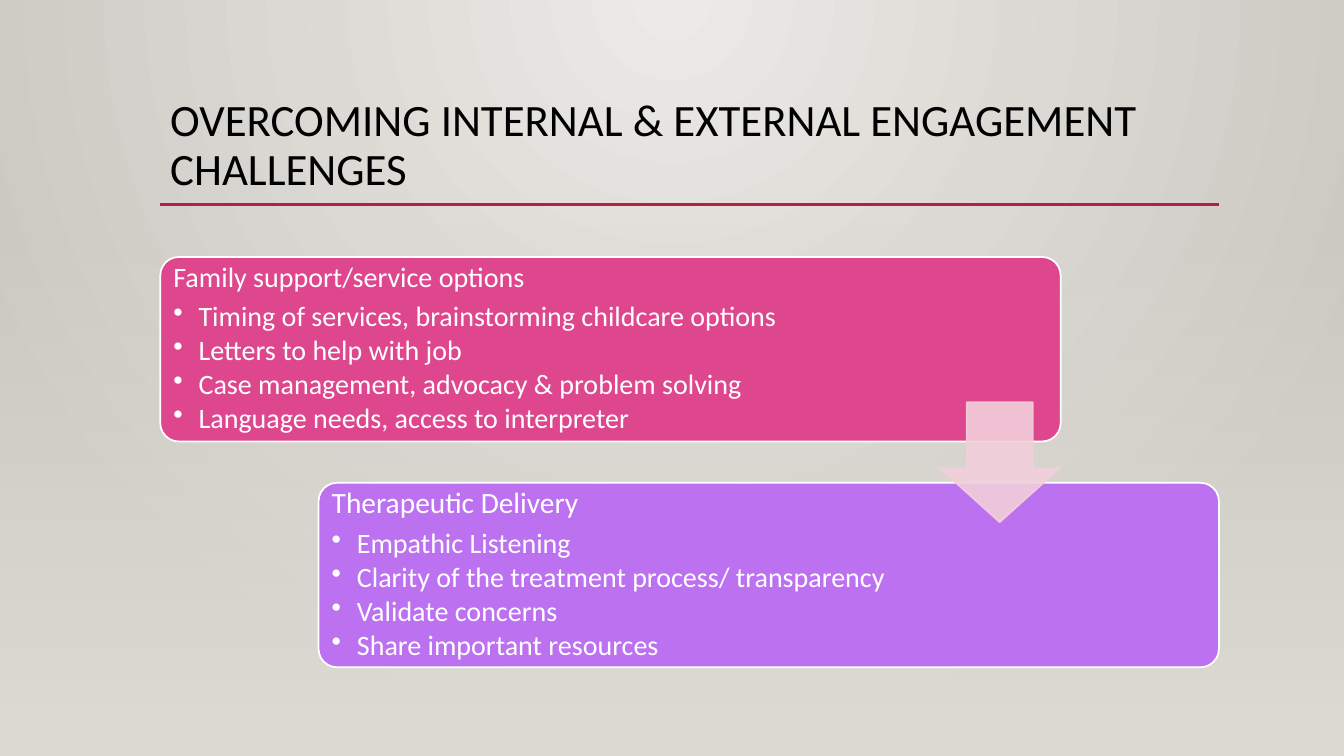
from lxml import etree
from pptx import Presentation
from pptx.dml.color import RGBColor
from pptx.enum.shapes import MSO_CONNECTOR, MSO_SHAPE
from pptx.enum.text import MSO_ANCHOR
from pptx.oxml import parse_xml
from pptx.oxml.ns import nsdecls, qn
from pptx.util import Inches, Pt

LINE = MSO_CONNECTOR.STRAIGHT
RECT = MSO_SHAPE.RECTANGLE
ROUND = MSO_SHAPE.ROUNDED_RECTANGLE
ARROW = MSO_SHAPE.DOWN_ARROW
MIDDLE = MSO_ANCHOR.MIDDLE

FONT = "Calibri"
BLACK = RGBColor(0x00, 0x00, 0x00)
WHITE = RGBColor(0xFF, 0xFF, 0xFF)
LIGHT = RGBColor(0xEC, 0xEA, 0xE7)
GREY = RGBColor(0xCA, 0xC7, 0xC1)
SAND = RGBColor(0xDF, 0xDB, 0xD5)
RED = RGBColor(0xB7, 0x1E, 0x42)
PINK = RGBColor(0xDE, 0x47, 0x8E)
VIOLET = RGBColor(0xBC, 0x72, 0xF0)
BLUSH = RGBColor(0xF2, 0xCF, 0xDB)

GLOW = (
    f'<a:path {nsdecls("a")} path="circle">'
    '<a:fillToRect l="43000" t="0" r="43000" b="100000"/></a:path>'
)
STEPS = [
    (1.59, 2.55, 7.03, PINK, 20, "Family support/service options", [
        "Timing of services, brainstorming childcare options",
        "Letters to help with job",
        "Case management, advocacy & problem solving",
        "Language needs, access to interpreter",
    ]),
    (3.16, 4.79, 6.05, VIOLET, 21, "Therapeutic Delivery", [
        "Empathic Listening",
        "Clarity of the treatment process/ transparency",
        "Validate concerns",
        "Share important resources",
    ]),
]


def set_alpha(color, share):
    """Set the opacity, in percent, of a colour element."""
    etree.SubElement(color, qn("a:alpha"), val=str(share * 1000))


def set_stops(fill, first, last):
    """Turn a fill into a gradient between two colours."""
    fill.gradient()
    for stop, color in zip(fill.gradient_stops, (first, last)):
        stop.color.rgb = color


def paint_back(slide):
    """Give the slide a round glow from the top centre."""
    fill = slide.background.fill
    set_stops(fill, LIGHT, GREY)
    lin = next(slide.element.iter(qn("a:lin")))
    lin.getparent().replace(lin, parse_xml(GLOW))


def add_fade(slide):
    """Add the band that fades in toward the foot of the slide."""
    band = slide.shapes.add_shape(
        RECT, Inches(0), Inches(2.21), Inches(13.33), Inches(5.29))
    band.shadow.inherit = False
    set_stops(band.fill, SAND, SAND)
    band.fill.gradient_angle = 270
    set_alpha(next(band.element.spPr.iter(qn("a:srgbClr"))), 0)
    band.line.fill.background()


def add_rule(slide):
    """Add the red line below the title."""
    rule = slide.shapes.add_connector(
        LINE, Inches(1.59), Inches(2.03), Inches(12.09), Inches(2.03))
    rule.line.color.rgb = RED
    rule.line.width = Pt(2.5)
    etree.SubElement(rule.element.spPr, qn("a:effectLst"))


def add_solid(slide, kind, box, fill, edge, adjust):
    """Add a filled shape with a thin edge."""
    shape = slide.shapes.add_shape(kind, *map(Inches, box))
    shape.shadow.inherit = False
    shape.fill.solid()
    shape.fill.fore_color.rgb = fill
    shape.line.color.rgb = edge
    shape.line.width = Pt(1.25)
    for index, value in enumerate(adjust):
        shape.adjustments[index] = value
    return shape


def add_frame(slide, box):
    """Add a wrapping text box and return its text frame."""
    frame = slide.shapes.add_textbox(*map(Inches, box)).text_frame
    frame.word_wrap = True
    return frame


def add_words(para, text, size, color):
    """Add one run of text to a paragraph."""
    para.line_spacing = 0.9
    run = para.add_run()
    run.text = text
    run.font.name = FONT
    run.font.size = Pt(size)
    run.font.color.rgb = color


def add_bullet(para):
    """Give a paragraph a bullet and a hanging indent."""
    props = para._p.get_or_add_pPr()
    props.set("marL", str(Inches(0.25)))
    props.set("indent", str(Inches(-0.25)))
    etree.SubElement(props, qn("a:buChar"), char="•")


def add_step(slide, left, top, width, fill, size, head, items):
    """Add a rounded card with a heading and its bullets."""
    add_solid(slide, ROUND, (left, top, 8.93, 1.83), fill, WHITE, [0.1])
    frame = add_frame(slide, (left + 0.05, top + 0.05, width, 1.72))
    frame.vertical_anchor = MIDDLE
    frame.margin_left = frame.margin_right = Inches(0.08)
    frame.margin_top = frame.margin_bottom = Inches(0.08)
    para = frame.paragraphs[0]
    para.space_after = Pt(6.6)
    add_words(para, head, size, WHITE)
    for item in items:
        para = frame.add_paragraph()
        para.level = 1
        add_bullet(para)
        para.space_after = Pt(2.7)
        add_words(para, item, 20, WHITE)


def add_arrow(slide):
    """Add the pale arrow from the first card to the second."""
    arrow = add_solid(
        slide, ARROW, (9.32, 3.99, 1.19, 1.19), BLUSH, BLUSH, [0.55, 0.45])
    for color in arrow.element.spPr.iter(qn("a:srgbClr")):
        set_alpha(color, 90)


def main():
    """Build the slide and save it."""
    deck = Presentation()
    deck.slide_width = Inches(13.33)
    deck.slide_height = Inches(7.5)
    slide = deck.slides.add_slide(deck.slide_layouts[6])
    paint_back(slide)
    add_fade(slide)
    title = add_frame(slide, (1.59, 0.88, 10.5, 1.15))
    title.vertical_anchor = MIDDLE
    add_words(title.paragraphs[0],
              "OVERCOMING INTERNAL & EXTERNAL ENGAGEMENT CHALLENGES",
              32, BLACK)
    add_rule(slide)
    for step in STEPS:
        add_step(slide, *step)
    add_arrow(slide)
    deck.save("out.pptx")


if __name__ == "__main__":
    main()
